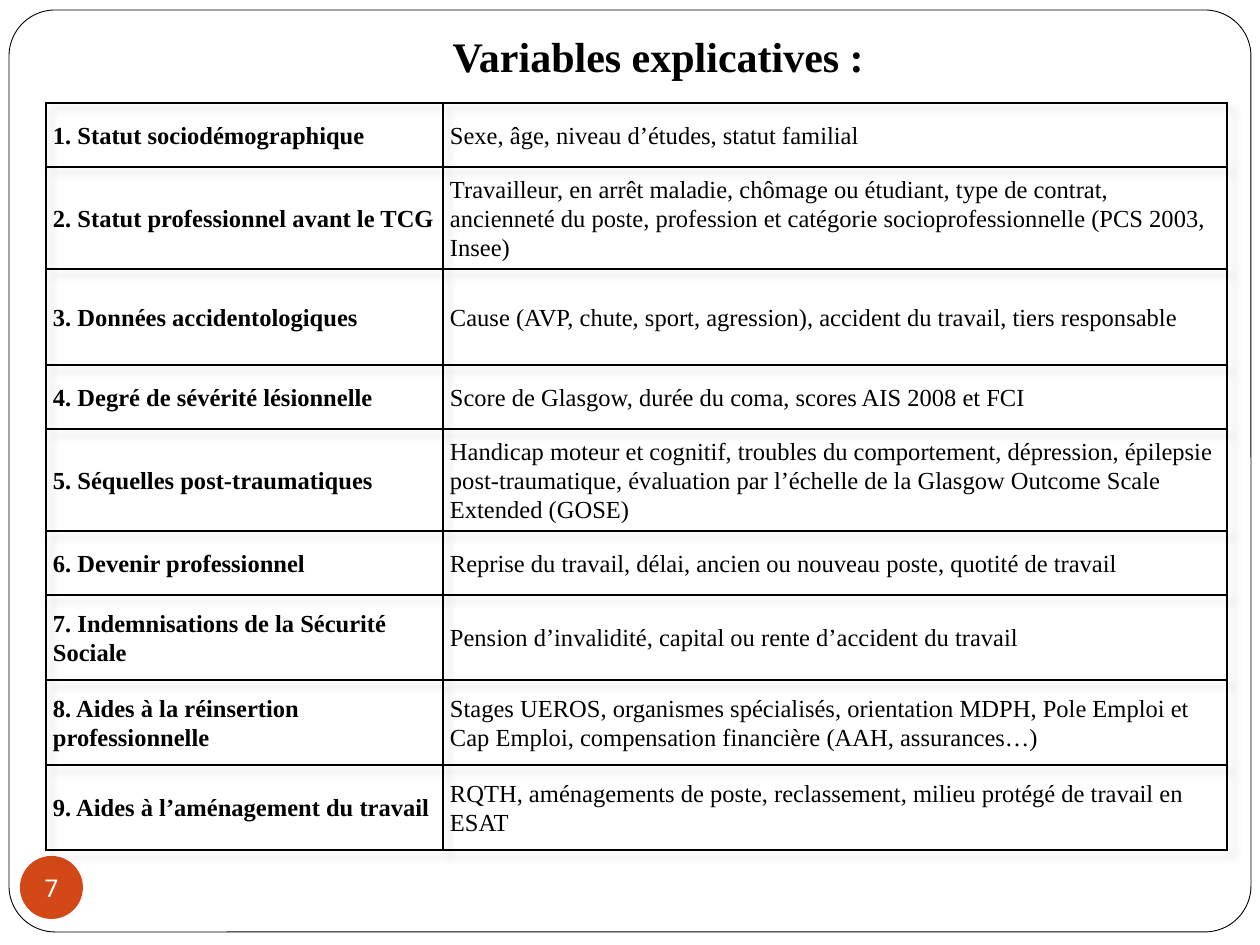
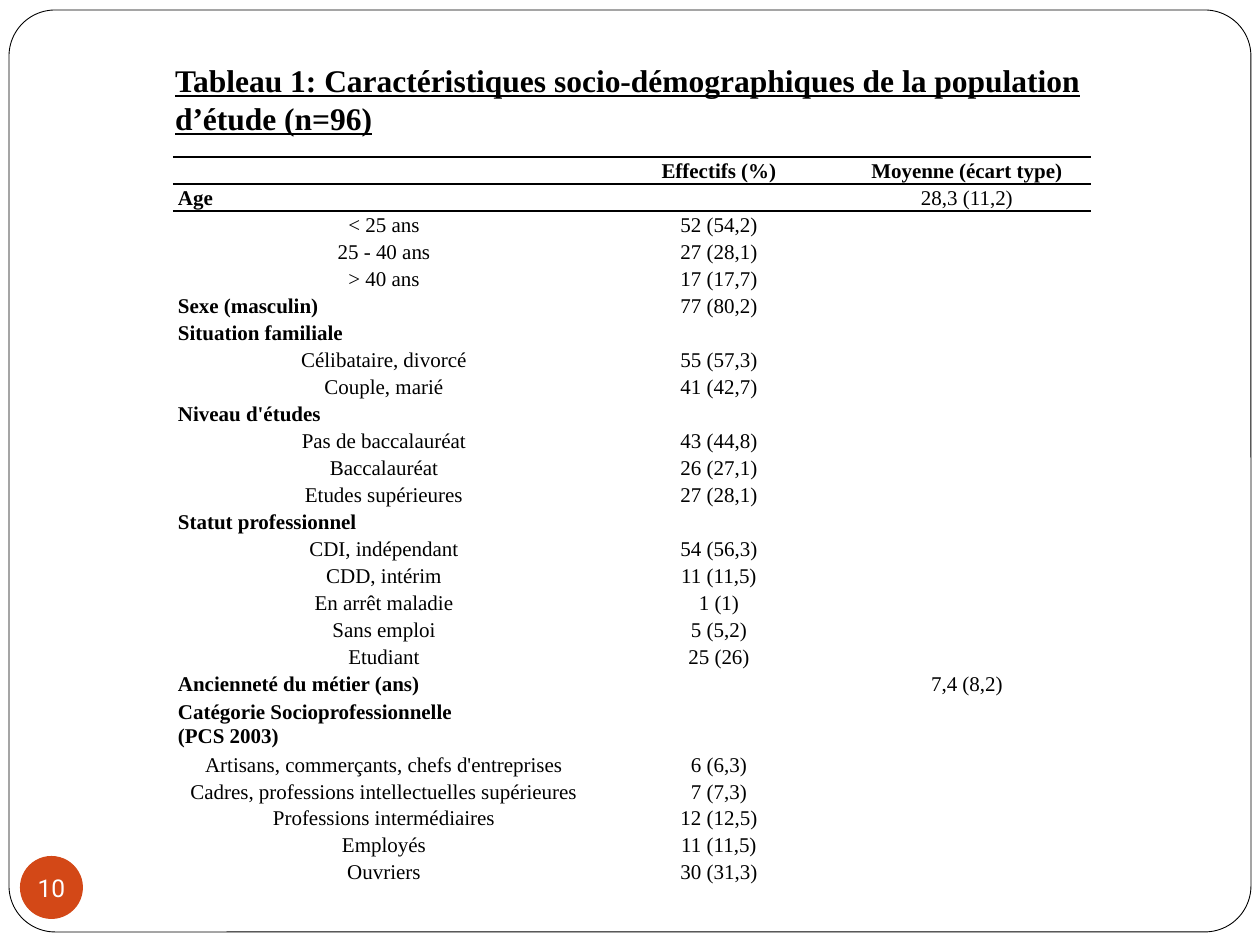
from lxml.etree import SubElement as Sub
from pptx import Presentation as Deck
from pptx.dml.color import RGBColor as Rgb
from pptx.enum.shapes import MSO_SHAPE as Form
from pptx.enum.text import MSO_ANCHOR as Anchor, MSO_AUTO_SIZE as Fit, PP_ALIGN as Align
from pptx.oxml import parse_xml
from pptx.oxml.ns import nsdecls, qn
from pptx.util import Emu, Pt

SCALE = 914400 / 126
HUES = {"ink": "000000", "page": "FFFFFF", "badge": "D34817"}
SERIF, SANS = "Times New Roman", "Roboto"
PLAIN = "{2D5ABB26-0587-4C30-8999-92F81FD0307C}"

THEMES = [
    ("1. Statut sociodémographique", "Sexe, âge, niveau d’études, statut familial", 64),
    ("2. Statut professionnel avant le TCG",
     "Travailleur, en arrêt maladie, chômage ou étudiant, type de contrat, ancienneté du poste, "
     "profession et catégorie socioprofessionnelle (PCS 2003, Insee)", 102),
    ("3. Données accidentologiques",
     "Cause (AVP, chute, sport, agression), accident du travail, tiers responsable", 96),
    ("4. Degré de sévérité lésionnelle",
     "Score de Glasgow, durée du coma, scores AIS 2008 et FCI", 64),
    ("5. Séquelles post-traumatiques",
     "Handicap moteur et cognitif, troubles du comportement, dépression, épilepsie "
     "post-traumatique, évaluation par l’échelle de la Glasgow Outcome Scale Extended (GOSE)", 102),
    ("6. Devenir professionnel",
     "Reprise du travail, délai, ancien ou nouveau poste, quotité de travail", 64),
    ("7. Indemnisations de la Sécurité Sociale",
     "Pension d’invalidité, capital ou rente d’accident du travail", 85),
    ("8. Aides à la réinsertion professionnelle",
     "Stages UEROS, organismes spécialisés, orientation MDPH, Pole Emploi et Cap Emploi, "
     "compensation financière (AAH, assurances…)", 85),
    ("9. Aides à l’aménagement du travail",
     "RQTH, aménagements de poste, reclassement, milieu protégé de travail en ESAT", 85),
]

GROUPS = [
    ("Age", "", "28,3 (11,2)",
     [("< 25 ans", "52 (54,2)"), ("25 - 40 ans", "27 (28,1)"), ("> 40 ans", "17 (17,7)")]),
    ("Sexe (masculin)", "77 (80,2)", "", []),
    ("Situation familiale", "", "",
     [("Célibataire, divorcé", "55 (57,3)"), ("Couple, marié", "41 (42,7)")]),
    ("Niveau d'études", "", "",
     [("Pas de baccalauréat", "43 (44,8)"), ("Baccalauréat", "26 (27,1)"),
      ("Etudes supérieures", "27 (28,1)")]),
    ("Statut professionnel", "", "",
     [("CDI, indépendant", "54 (56,3)"), ("CDD, intérim", "11 (11,5)"),
      ("En arrêt maladie", "1 (1)"), ("Sans emploi", "5 (5,2)"), ("Etudiant", "25 (26)")]),
    ("Ancienneté du métier (ans)", "", "7,4 (8,2)", []),
    ("Catégorie Socioprofessionnelle\n(PCS 2003)", "", "",
     [("Artisans, commerçants, chefs d'entreprises", "6 (6,3)"),
      ("Cadres, professions intellectuelles supérieures", "7 (7,3)"),
      ("Professions intermédiaires", "12 (12,5)"), ("Employés", "11 (11,5)"),
      ("Ouvriers", "30 (31,3)")]),
]


def px(num):
    return Emu(round(num * SCALE))


def hue(name):
    return Rgb.from_string(HUES[name])


def put(item, **form):
    for key, value in form.items():
        setattr(item, key, value)


def write(frame, text, size, font=SERIF, ink="ink", align=Align.LEFT, space=None, **form):
    frame.text = text
    for para in frame.paragraphs:
        put(para, alignment=align, line_spacing=space)
        for run in para.runs:
            put(run.font, name=font, size=Pt(size), **form)
            run.font.color.rgb = hue(ink)
        if not para.runs:
            Sub(para._p, qn("a:endParaRPr"), sz="800")


def shape(slide, kind, box, fill):
    item = slide.shapes.add_shape(kind, *map(px, box))
    item.shadow.inherit = False
    item.fill.solid()
    item.fill.fore_color.rgb = hue(fill)
    item.line.fill.background()
    return item


def frame(slide):
    item = shape(slide, Form.ROUNDED_RECTANGLE, (9, 10, 1242, 922), "page")
    item.adjustments[0] = 0.05
    item.line.color.rgb = hue("ink")
    item.line.width = Pt(0.5)
    slide.slide_layout.shapes._spTree.insert(2, item._element)


def badge(slide, num):
    item = shape(slide, Form.OVAL, (20, 856, 63, 63), "badge")
    put(item.text_frame, margin_left=0, margin_right=0, margin_top=0, margin_bottom=0,
        word_wrap=False, vertical_anchor=Anchor.MIDDLE)
    write(item.text_frame, num, 14, SANS, "page", Align.CENTER)


def title(slide, text, box, size, anchor, **form):
    item = slide.shapes.title
    put(item, **dict(zip(("left", "top", "width", "height"), map(px, box))))
    put(item.text_frame, auto_size=Fit.NONE, word_wrap=True, vertical_anchor=anchor,
        margin_left=px(12), margin_right=px(12), margin_top=px(6), margin_bottom=px(12))
    write(item.text_frame, text, size, bold=True, **form)


def grid(slide, left, top, cols, rows):
    box = map(px, (left, top, sum(cols), sum(rows)))
    table = slide.shapes.add_table(len(rows), len(cols), *box).table
    put(table, first_row=False, horz_banding=False)
    table._tbl.tblPr.find(qn("a:tableStyleId")).text = PLAIN
    for col, width in zip(table.columns, cols):
        col.width = px(width)
    for row, height in zip(table.rows, rows):
        row.height = px(height)
    return table


def fill(cell, text, size, pad, sides="", **form):
    put(cell, margin_left=px(pad), margin_right=px(pad), margin_top=0, margin_bottom=0,
        vertical_anchor=Anchor.MIDDLE)
    write(cell.text_frame, text, size, space=1.07, **form)
    cell.fill.background()
    for spot, side in enumerate(sides):
        cell._tc.tcPr.insert(spot, parse_xml(
            f'<a:ln{side} {nsdecls("a")} w="12700"><a:solidFill>'
            f'<a:srgbClr val="{HUES["ink"]}"/></a:solidFill></a:ln{side}>'))


def shade(table):
    table._tbl.tblPr.insert(0, parse_xml(
        f'<a:effectLst {nsdecls("a")}><a:outerShdw blurRad="50800" dist="63500" dir="2700000">'
        f'<a:srgbClr val="{HUES["ink"]}"><a:alpha val="15000"/></a:srgbClr>'
        '</a:outerShdw></a:effectLst>'))


def themes(slide):
    title(slide, "Variables explicatives : ", (128, 19, 1071, 74), 24, Anchor.BOTTOM,
          align=Align.CENTER)
    table = grid(slide, 46, 103, (397, 784), [height for *_, height in THEMES])
    shade(table)
    for row, texts in enumerate(THEMES):
        for col, text in enumerate(texts[:2]):
            fill(table.cell(row, col), text, 14, 7, "LRTB", bold=col == 0)


def groups(slide):
    title(slide, "Tableau 1: Caractéristiques socio-démographiques de la population d’étude (n=96)",
          (163, 55, 1007, 127), 18, Anchor.TOP, underline=True)
    lines = [(True, "", "Effectifs (%)", "Moyenne (écart type)")]
    for head, count, mean, parts in GROUPS:
        lines.append((True, head, count, mean))
        lines += [(False, part, share, "") for part, share in parts]
    rows = [27 * (1 + head.count("\n")) for _, head, *_ in lines]
    table = grid(slide, 173, 157, (422, 248, 248), rows)
    rules = {0: "TB", 1: "T"}
    for row, (main_row, *texts) in enumerate(lines):
        for col, text in enumerate(texts):
            lead = main_row and col == 0
            fill(table.cell(row, col), text, 12, 5, rules.get(row, ""),
                 bold=lead or row == 0, align=Align.LEFT if lead else Align.CENTER)


def main():
    deck = Deck()
    put(deck, slide_width=px(1260), slide_height=px(945))
    layout = deck.slide_layouts[5]
    for num, draw in (("7", themes), ("10", groups)):
        slide = deck.slides.add_slide(layout)
        if num == "7":
            frame(slide)
        badge(slide, num)
        draw(slide)
    deck.save("out.pptx")


if __name__ == "__main__":
    main()
